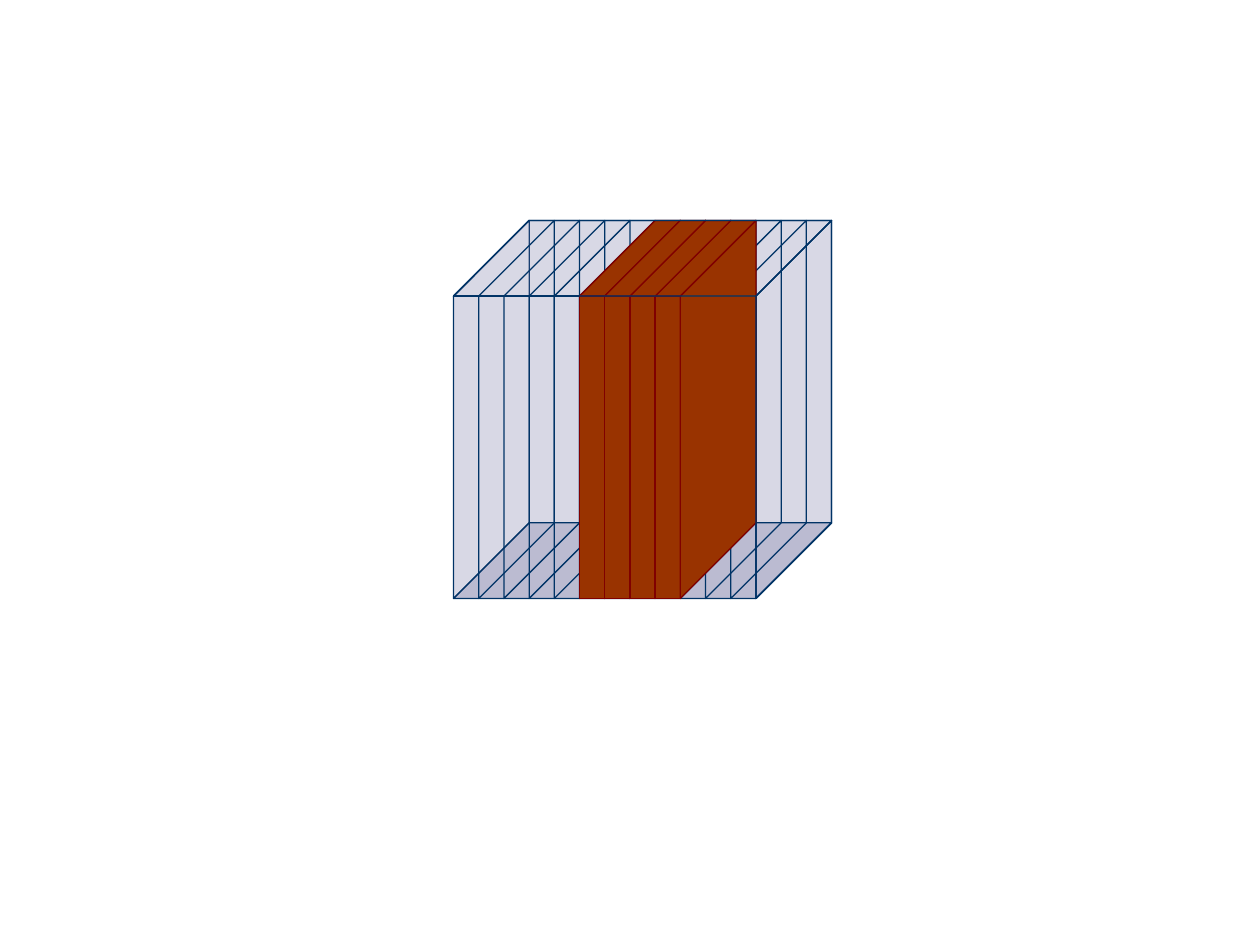
"""Draw a sliced glass cube with a highlighted block of slices."""
from dataclasses import dataclass

from lxml import etree
from pptx import Presentation
from pptx.dml.color import RGBColor
from pptx.enum import shapes
from pptx.oxml import ns
from pptx.util import Pt


@dataclass(frozen=True)
class Theme:
    """Colours and line width."""
    glass: str = "666699"
    edge: str = "003366"
    block: str = "993300"
    block_edge: str = "800000"
    glass_alpha: int = 25
    line: float = 0.75


THEME = Theme()
LEFT, TOP, SIDE, DEPTH = 259.2, 169.2, 172.8, 43.2
RIGHT, BOTTOM, BACK = LEFT + SIDE, TOP + SIDE, TOP - DEPTH
SLICES = 12
STEP = SIDE / SLICES
FIRST, LAST = 5, 9
GLASS = dict(fill=THEME.glass, alpha=THEME.glass_alpha)
BLOCK = dict(fill=THEME.block, line=THEME.block_edge)


def style(s, fill=None, line=THEME.edge, alpha=None):
    """Set the fill, transparency and line of a shape."""
    s.shadow.inherit = False
    s.line.color.rgb = RGBColor.from_string(line)
    s.line.width = Pt(THEME.line)
    if fill is None:
        s.fill.background()
        return
    s.fill.solid()
    s.fill.fore_color.rgb = RGBColor.from_string(fill)
    if alpha is not None:
        clr = s.fill._xPr.find(".//" + ns.qn("a:srgbClr"))
        etree.SubElement(clr, ns.qn("a:alpha")).set("val", str(alpha * 1000))


def polygon(parent, points, **fmt):
    """Draw a closed outline through points."""
    start, *rest = [(Pt(x), Pt(y)) for x, y in points]
    builder = parent.build_freeform(*start)
    builder.add_line_segments(rest, close=True)
    style(builder.convert_to_shape(), **fmt)


def front(parent, x, width, **fmt):
    """Draw a rectangle on the front face."""
    s = parent.add_shape(shapes.MSO_SHAPE.RECTANGLE, Pt(x), Pt(TOP), Pt(width), Pt(SIDE))
    style(s, **fmt)


def upright(parent, x, **fmt):
    """Draw a plane that runs from front to back at x."""
    polygon(parent, [(x, BOTTOM), (x + DEPTH, BOTTOM - DEPTH),
                     (x + DEPTH, BACK), (x, TOP)], **fmt)


def level(parent, x, y, width, **fmt):
    """Draw a horizontal plane whose front edge starts at x, y."""
    polygon(parent, [(x, y), (x + DEPTH, y - DEPTH),
                     (x + width + DEPTH, y - DEPTH), (x + width, y)], **fmt)


def slice_x(i):
    """Return the front position of slice boundary i."""
    return LEFT + i * STEP


def glass_cube(parent):
    """Draw the transparent cube and its slice planes."""
    upright(parent, LEFT)
    front(parent, LEFT, SIDE, **GLASS)
    upright(parent, RIGHT, **GLASS)
    level(parent, LEFT, TOP, SIDE, **GLASS)
    level(parent, LEFT, BOTTOM, SIDE, **GLASS)
    for i in (1, *range(SLICES - 1, 1, -1)):
        upright(parent, slice_x(i))


def solid_block(parent):
    """Draw the highlighted slices."""
    level(parent, slice_x(FIRST), TOP, STEP, **BLOCK)
    for i in range(FIRST, LAST):
        front(parent, slice_x(i), STEP, **BLOCK)
        upright(parent, slice_x(i + 1), **BLOCK)
    for i in range(LAST - 1, FIRST, -1):
        level(parent, slice_x(i), TOP, STEP, **BLOCK)


def cube_edges(parent):
    """Redraw the top and right edges over the block."""
    inner, outer = LEFT + DEPTH, RIGHT + DEPTH
    polygon(parent, [(inner, TOP), (RIGHT, TOP), (RIGHT, BOTTOM),
                     (outer, BOTTOM - DEPTH), (outer, BACK), (RIGHT, TOP),
                     (outer, BACK), (inner, BACK), (LEFT, TOP)])


def main():
    """Build and save the slide."""
    prs = Presentation()
    prs.slide_width, prs.slide_height = Pt(720), Pt(540)
    sp = prs.slides.add_slide(prs.slide_layouts[6]).shapes
    glass_cube(sp.add_group_shape().shapes)
    solid_block(sp)
    cube_edges(sp)
    prs.save("out.pptx")


if __name__ == "__main__":
    main()
